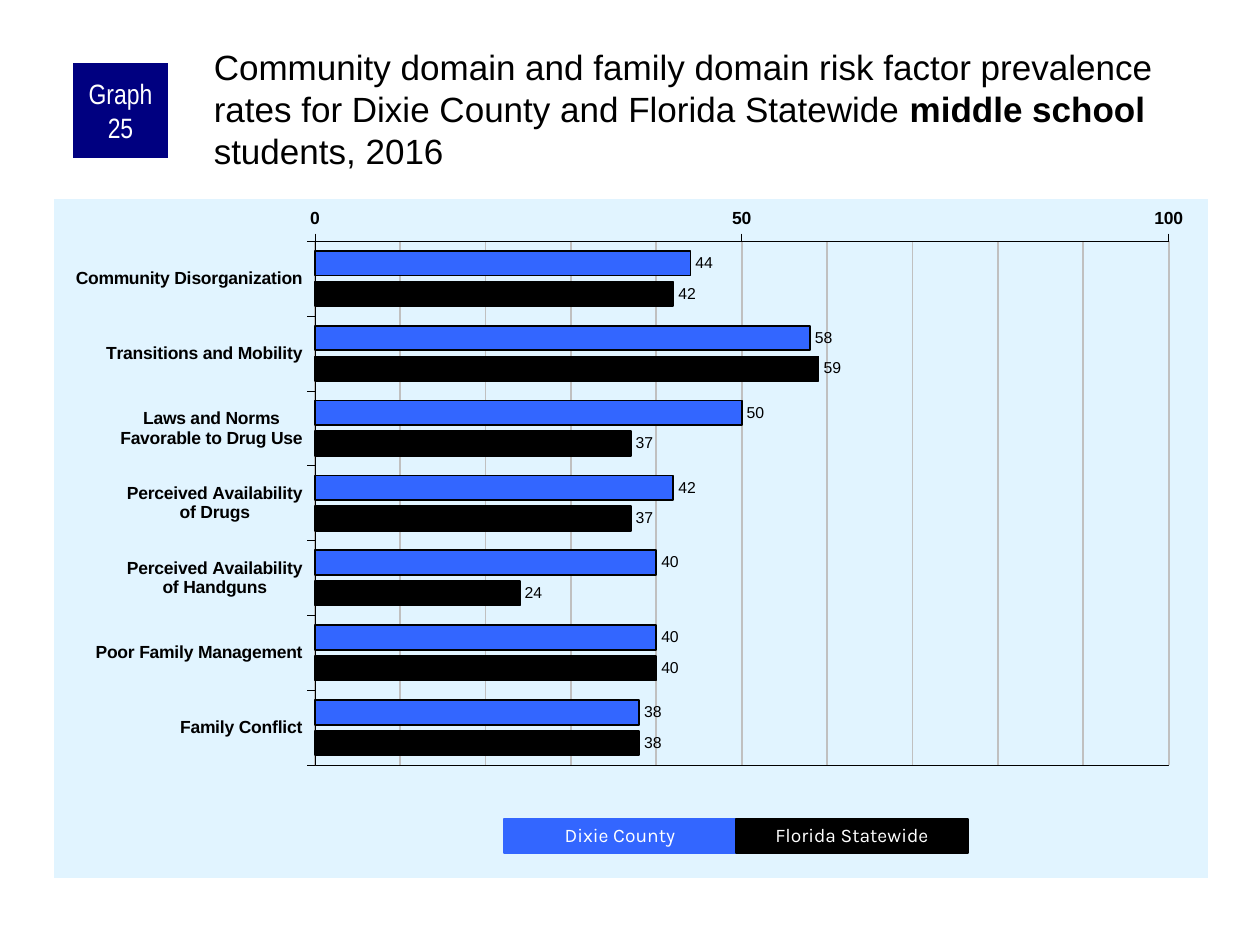
from lxml import etree
from pptx import Presentation, util as u
from pptx.chart.data import CategoryChartData
from pptx.dml.color import RGBColor
from pptx.enum import chart as ch, shapes, text
from pptx.oxml.ns import qn

PX = 914400 / 126
COLORS = {"county": "3366FF", "state": "000000", "ink": "000000", "white": "FFFFFF",
          "badge": "000080", "panel": "E1F4FF", "grid": "C0C0C0"}
RATES = {
    "Community Disorganization": (44, 42),
    "Transitions and Mobility": (58, 59),
    "Laws and Norms\nFavorable to Drug Use": (50, 37),
    "Perceived Availability\nof Drugs": (42, 37),
    "Perceived Availability\nof Handguns": (40, 24),
    "Poor Family Management": (40, 40),
    "Family Conflict": (38, 38),
}
PLOT = {"x": 0.226, "y": 0.062, "w": 0.74, "h": 0.772}
CHART_NS = "http://schemas.openxmlformats.org/drawingml/2006/chart"
DRAW_NS = "http://schemas.openxmlformats.org/drawingml/2006/main"


def box(*lengths):
    """Turn px lengths into EMU."""
    return [u.Emu(round(n * PX)) for n in lengths]


def rgb(name):
    """Look up a named colour."""
    return RGBColor.from_string(COLORS[name])


def set_font(font, name, size, color, bold=None):
    """Apply typeface, size, colour and weight."""
    font.name, font.size, font.bold = name, u.Pt(size), bold
    font.color.rgb = rgb(color)


def set_line(line, color, width):
    """Give a line a solid colour and a width in points."""
    line.color.rgb = rgb(color)
    line.width = u.Pt(width)


def area_format(fill, line):
    """Build chart shape properties from fill and line markup."""
    return etree.fromstring(
        f'<c:spPr xmlns:c="{CHART_NS}" xmlns:a="{DRAW_NS}">{fill}{line}</c:spPr>')


def solid(name):
    """Return solid fill markup."""
    return f'<a:solidFill><a:srgbClr val="{COLORS[name]}"/></a:solidFill>'


def outline(name, width):
    """Return line markup with a width in points."""
    return f'<a:ln w="{u.Pt(width)}">{solid(name)}</a:ln>'


def format_areas(chart):
    """Place the plot and format the panel, plot frame and minor gridlines."""
    space = chart.element
    plot_area = space.find(".//" + qn("c:plotArea"))
    for old in plot_area.findall(qn("c:layout")):
        plot_area.remove(old)
    places = '<c:layoutTarget val="inner"/><c:xMode val="edge"/><c:yMode val="edge"/>'
    places += "".join(f'<c:{side} val="{share}"/>' for side, share in PLOT.items())
    plot_area.insert(0, etree.fromstring(
        f'<c:layout xmlns:c="{CHART_NS}"><c:manualLayout>{places}</c:manualLayout></c:layout>'))
    plot_area.append(area_format("<a:noFill/>", outline("ink", 0.25)))
    plot_area.find(".//" + qn("c:minorGridlines")).append(
        area_format("", outline("grid", 1)))
    space.find(qn("c:chart")).addnext(
        area_format(solid("panel"), "<a:ln><a:noFill/></a:ln>"))


def format_axes(chart):
    """Format both axes and switch on gridlines at every ten."""
    factors, rates = chart.category_axis, chart.value_axis
    for axis in (factors, rates):
        set_font(axis.tick_labels.font, "Arial", 10, "ink", True)
        set_line(axis.format.line, "ink", 0.25)
        axis.major_tick_mark = ch.XL_TICK_MARK.OUTSIDE
        axis.minor_tick_mark = ch.XL_TICK_MARK.NONE
    factors.reverse_order = True
    factors.crosses = ch.XL_AXIS_CROSSES.MAXIMUM
    rates.minimum_scale, rates.maximum_scale = 0, 100
    rates.major_unit, rates.minor_unit = 50, 10
    rates.has_major_gridlines = rates.has_minor_gridlines = True
    set_line(rates.major_gridlines.format.line, "grid", 1)


def add_rates_chart(slide):
    """Add the clustered bars of prevalence rates."""
    data = CategoryChartData(number_format="0")
    data.categories = list(RATES)
    for number, values in enumerate(zip(*RATES.values()), 1):
        data.add_series(f"Series {number}", values)
    chart = slide.shapes.add_chart(
        ch.XL_CHART_TYPE.BAR_CLUSTERED, *box(54, 199, 1154, 679), data).chart
    chart.has_title = chart.has_legend = False
    set_font(chart.font, "Arial", 11.8, "ink")
    bars = chart.plots[0]
    bars.gap_width, bars.overlap, bars.vary_by_categories = 80, -25, False
    for series, color in zip(bars.series, ("county", "state")):
        series.invert_if_negative = False
        series.format.fill.solid()
        series.format.fill.fore_color.rgb = rgb(color)
        set_line(series.format.line, "ink", 1)
        labels = series.data_labels
        labels.show_value = True
        labels.position = ch.XL_LABEL_POSITION.OUTSIDE_END
        set_font(labels.font, "Arial", 9, "ink")
    format_axes(chart)
    format_areas(chart)


def add_block(slide, place, words, color, typeface, size):
    """Add a filled rectangle with centred white text."""
    block = slide.shapes.add_shape(shapes.MSO_SHAPE.RECTANGLE, *box(*place))
    block.shadow.inherit = False
    block.fill.solid()
    block.fill.fore_color.rgb = rgb(color)
    block.line.fill.background()
    frame = block.text_frame
    frame.word_wrap = True
    frame.vertical_anchor = text.MSO_ANCHOR.MIDDLE
    label = frame.paragraphs[0]
    label.text, label.alignment = words, text.PP_ALIGN.CENTER
    set_font(label.font, typeface, size, "white")
    return block


def add_badge(slide):
    """Add the graph number."""
    frame = add_block(slide, (73, 63, 95, 95), "Graph 25", "badge",
                      "Arial Narrow", 16).text_frame
    frame.margin_left = frame.margin_right = u.Inches(0.05)
    frame.margin_top = frame.margin_bottom = 0


def add_key(slide):
    """Add the two adjoining colour keys."""
    width = 232
    for place, (words, color) in enumerate(
            (("Dixie County", "county"), ("Florida Statewide", "state"))):
        key = add_block(slide, (504 + place * width, 819, width, 34), words, color,
                        "Karla", 11)
        set_line(key.line, color, 0.75)
        key.text_frame.auto_size = text.MSO_AUTO_SIZE.SHAPE_TO_FIT_TEXT
        key.text_frame.paragraphs[0].line_spacing = 0.9


def set_title(slide):
    """Fill and place the title."""
    title = slide.shapes.title
    title.left, title.top, title.width, title.height = box(210, 42, 998, 105)
    frame = title.text_frame
    frame.word_wrap, frame.auto_size = True, text.MSO_AUTO_SIZE.NONE
    frame.vertical_anchor = text.MSO_ANCHOR.TOP
    frame.margin_left = frame.margin_top = u.Inches(0.03)
    frame.margin_right = frame.margin_bottom = 0
    heading = frame.paragraphs[0]
    heading.alignment, heading.line_spacing = text.PP_ALIGN.LEFT, u.Pt(24)
    set_font(heading.font, "Arial", 20, "ink")
    for words, bold in (
            ("Community domain and family domain risk factor prevalence rates "
             "for Dixie County and Florida Statewide ", False),
            ("middle school", True), (" students, 2016", False)):
        run = heading.add_run()
        run.text, run.font.bold = words, bold


def main():
    """Build and save the slide."""
    deck = Presentation()
    deck.slide_width, deck.slide_height = u.Inches(10), u.Inches(7.5)
    slide = deck.slides.add_slide(deck.slide_layouts[5])
    add_rates_chart(slide)
    add_badge(slide)
    set_title(slide)
    add_key(slide)
    deck.save("out.pptx")


if __name__ == "__main__":
    main()
